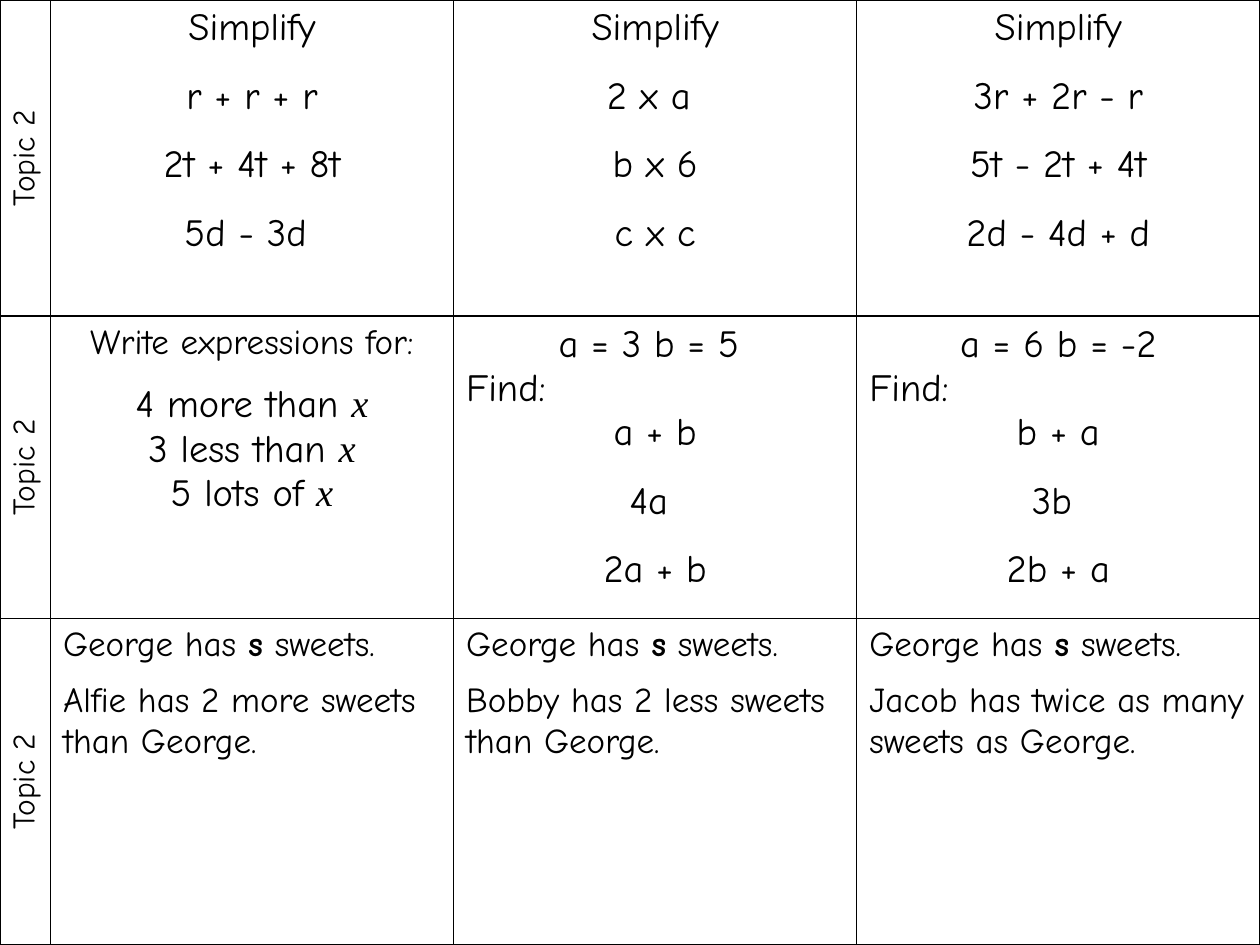
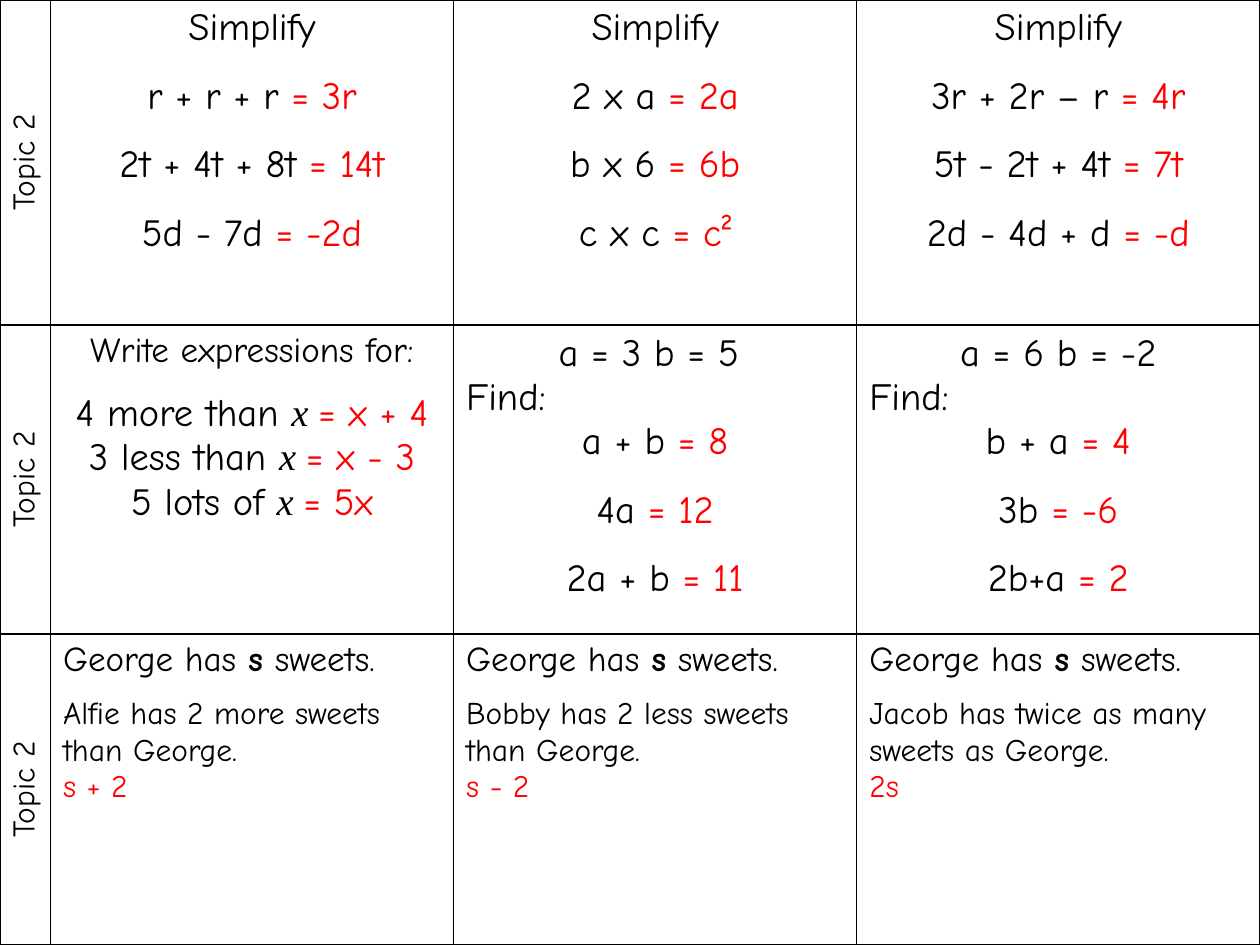
from dataclasses import dataclass

from lxml.etree import SubElement
from pptx import Presentation
from pptx.dml.color import RGBColor
from pptx.enum.text import MSO_ANCHOR, PP_ALIGN
from pptx.oxml.ns import qn
from pptx.util import Inches, Pt


@dataclass(frozen=True)
class Theme:
    ink: str = "000000"
    answer: str = "FF0000"
    font: str = "Comic Neue"
    variable_font: str = "Times New Roman"
    label: int = 18
    body: int = 20
    sum: int = 22
    border: float = 1
    wide_gap: float = 13.8
    mid_gap: float = 11.5
    small_gap: float = 9.2


T = Theme()
WIDTH, HEIGHT = 10, 7.5
LABEL_COL = 0.4
CARDS = 3
CARD_COL = (WIDTH - LABEL_COL) / CARDS
LABEL_MARGIN = 0.05

# A bar in a line separates the question from its answer.
QUESTIONS = {
    "rows": (2.51, 2.4, 2.59),
    "simplify": (
        ("r + r + r", "2t + 4t + 8t", "5d - 3d "),
        ("2 x a ", "b x 6", "c x c"),
        ("3r + 2r - r", "5t - 2t + 4t", "2d - 4d + d"),
    ),
    "variable": "x",
    "expressions": ("", "", ""),
    "substitute": (("a + b", "4a ", "2a + b"), ("b + a", "3b ", "2b + a")),
    "sweets_size": T.body,
    "sweets": ("", "", ""),
}
ANSWERS = {
    "rows": (2.58, 2.45, 2.47),
    "simplify": (
        ("r + r + r| = 3r", "2t + 4t + 8t |= 14t", "5d - 7d |= -2d"),
        ("2 x a |= 2a", "b x 6 |= 6b", "c x c |= c²"),
        ("3r + 2r – r |= 4r", "5t - 2t + 4t |= 7t", "2d - 4d + d |= -d"),
    ),
    "variable": "x ",
    "expressions": ("= x + 4", "= x - 3", "= 5x"),
    "substitute": (
        ("a + b |= 8", "4a |= 12", "2a + b |= 11"),
        ("b + a |= 4", "3b |= -6", "2b+a |= 2"),
    ),
    "sweets_size": T.label,
    "sweets": ("s + 2", "s - 2", "2s"),
}
PHRASES = ("4 more than ", "3 less than ", "5 lots of ")
VALUES = ("a = 3 b = 5 ", "a = 6 b = -2")
STORIES = (
    "Alfie has 2 more sweets than George.",
    "Bobby has 2 less sweets than George.",
    "Jacob has twice as many sweets as George.",
)


def run(p, text, size=T.sum, color=T.ink, font=T.font, bold=False, italic=False):
    if not text:
        return
    r = p.add_run()
    r.text = text
    r.font.size, r.font.name = Pt(size), font
    r.font.bold, r.font.italic = bold, italic
    r.font.color.rgb = RGBColor.from_string(color)


def line(tf, text="", size=T.sum, align=PP_ALIGN.CENTER, gap=0):
    """Add a paragraph; the part of text after a bar is an answer."""
    p = tf.paragraphs[0]
    if p.runs:
        p = tf.add_paragraph()
    p.alignment, p.space_before = align, Pt(gap)
    question, _, answer = text.partition("|")
    run(p, question, size)
    run(p, answer, size, T.answer)
    return p


def simplify_card(tf, sums):
    line(tf, "Simplify")
    for text in sums:
        line(tf, text, gap=T.wide_gap)


def expressions_card(tf, variable, answers):
    line(tf, "Write expressions for:", T.body)
    for i, (phrase, answer) in enumerate(zip(PHRASES, answers)):
        p = line(tf, phrase, gap=0 if i else T.mid_gap)
        run(p, variable, font=T.variable_font, italic=True)
        run(p, answer, color=T.answer)


def substitute_card(tf, values, sums):
    line(tf, values)
    line(tf, "Find:", align=PP_ALIGN.LEFT)
    for i, text in enumerate(sums):
        line(tf, text, gap=T.wide_gap if i else 0)


def sweets_card(tf, story, answer, size):
    p = line(tf, "George has ", T.body, PP_ALIGN.LEFT)
    run(p, "s", T.body, bold=True)
    run(p, " sweets.", T.body)
    line(tf, story, size, PP_ALIGN.LEFT, T.small_gap)
    if answer:
        line(tf, "|" + answer, size, PP_ALIGN.LEFT)


def topic_label(cell):
    line(cell.text_frame, "Topic 2", T.label)
    cell.vertical_anchor = MSO_ANCHOR.MIDDLE
    cell.margin_left = cell.margin_right = Inches(LABEL_MARGIN)
    cell._tc.get_or_add_tcPr().set("vert", "vert270")


def style_cell(cell):
    """Draw all four borders and leave the cell unfilled."""
    tc_pr = cell._tc.get_or_add_tcPr()
    for side in ("lnL", "lnR", "lnT", "lnB"):
        ln = SubElement(tc_pr, qn(f"a:{side}"), w=str(Pt(T.border)))
        fill = SubElement(ln, qn("a:solidFill"))
        SubElement(fill, qn("a:srgbClr"), val=T.ink)
    cell.fill.background()


def card_grid(s, heights):
    frame = s.shapes.add_table(len(heights), CARDS + 1, 0, 0,
                               Inches(WIDTH), Inches(HEIGHT))
    table = frame.table
    table.first_row = table.horz_banding = False
    for i, col in enumerate(table.columns):
        col.width = Inches(CARD_COL if i else LABEL_COL)
    for row, height in zip(table.rows, heights):
        row.height = Inches(height)
    for cell in table.iter_cells():
        style_cell(cell)
    for i in range(len(heights)):
        topic_label(table.cell(i, 0))
    return table


def topic_slide(prs, content):
    s = prs.slides.add_slide(prs.slide_layouts[6])
    table = card_grid(s, content["rows"])

    def card(row, col):
        return table.cell(row, col).text_frame

    for col, sums in enumerate(content["simplify"], 1):
        simplify_card(card(0, col), sums)
    expressions_card(card(1, 1), content["variable"], content["expressions"])
    for col, (values, sums) in enumerate(zip(VALUES, content["substitute"]), 2):
        substitute_card(card(1, col), values, sums)
    for col, (story, answer) in enumerate(zip(STORIES, content["sweets"]), 1):
        sweets_card(card(2, col), story, answer, content["sweets_size"])


def main():
    prs = Presentation()
    prs.slide_width, prs.slide_height = Inches(WIDTH), Inches(HEIGHT)
    for content in (QUESTIONS, ANSWERS):
        topic_slide(prs, content)
    prs.save("out.pptx")


if __name__ == "__main__":
    main()
